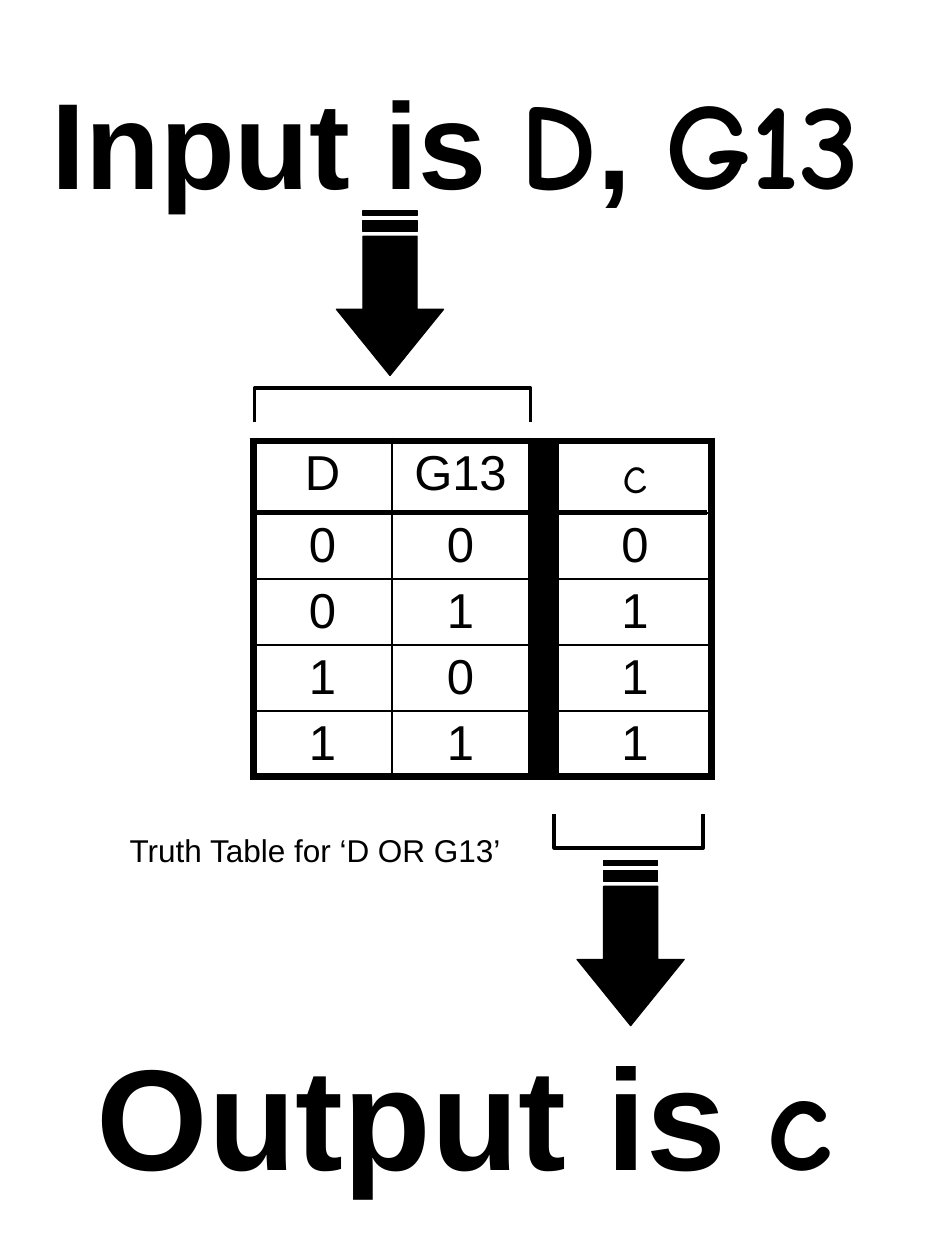
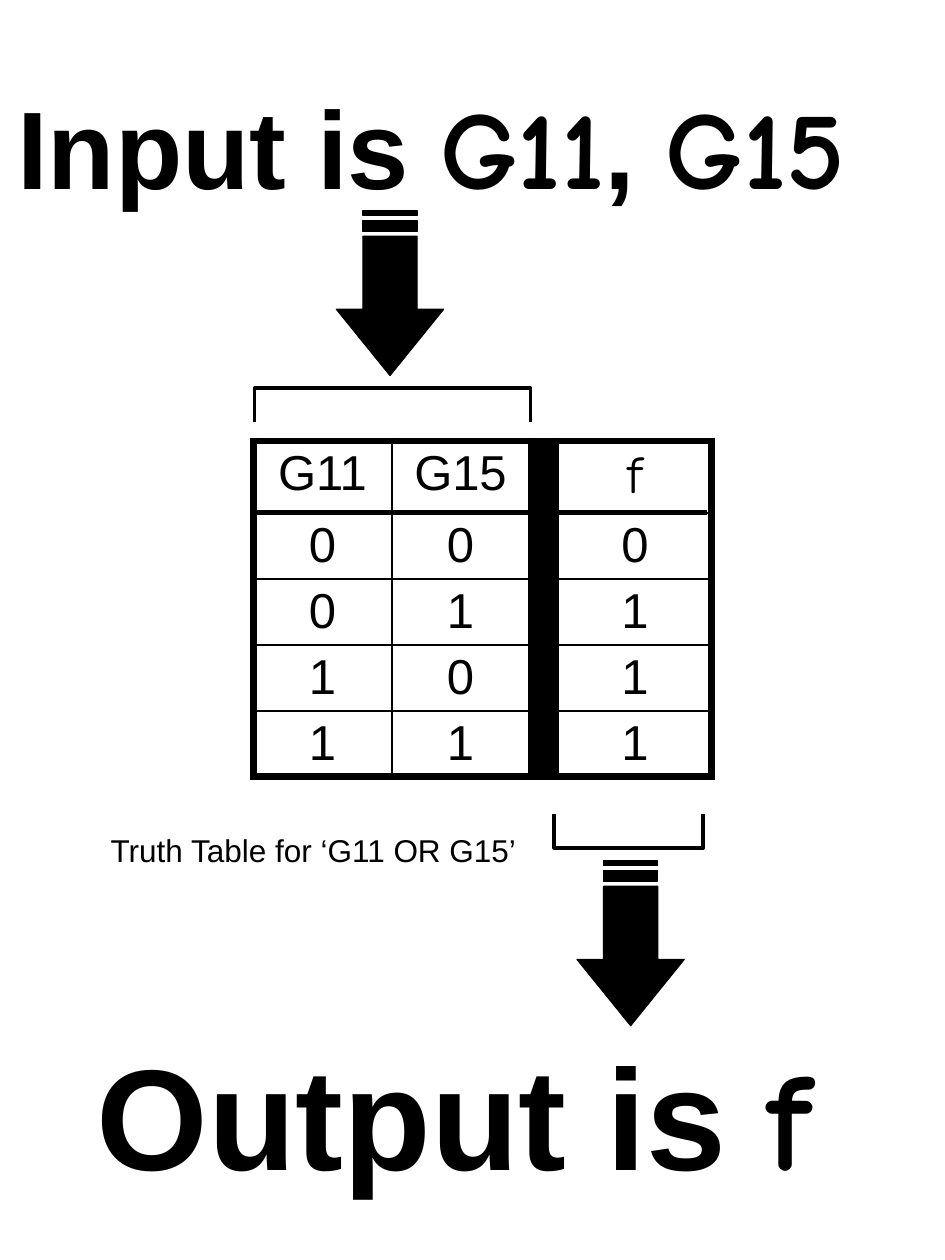
from dataclasses import dataclass
from itertools import product

from lxml import etree
from pptx import Presentation
from pptx import util as u
from pptx.dml.color import RGBColor
from pptx.enum import shapes, text
from pptx.oxml import ns

PX = 4572  # 200 px to the inch
INK = "000000"
SANS, HAND = "Arial", "Comic Neue"
CELL_MARGIN = 9
THIN, THICK = 1, 4.5
COLUMNS = (220, 218, 46, 244)
ROW_HEIGHT = 104
DIVIDER = 2  # index of the solid black column


@dataclass(frozen=True)
class Box:
    left: int
    top: int
    width: int
    height: int


@dataclass(frozen=True)
class Span:
    text: str
    font: str
    size: int
    bold: bool = False


@dataclass(frozen=True)
class Gate:
    inputs: tuple[str, str]
    output: str
    input_size: int
    input_box: Box
    caption_box: Box


GATES = (
    Gate(("D", "G13"), "c", 70, Box(62, 96, 1404, 254), Box(186, 1310, 638, 80)),
    Gate(("G11", "G15"), "f", 63, Box(8, 116, 1474, 230), Box(156, 1310, 696, 80)),
)
TABLE_BOX = Box(402, 700, 728, 574)
OUTPUT_BOX = Box(134, 1620, 1218, 294)
ARROWS = (Box(488, 380, 262, 170), Box(870, 1412, 262, 170))
INPUT_BRACKET = ((404, 670), (404, 616), (842, 616), (842, 670))
OUTPUT_BRACKET = ((880, 1292), (880, 1346), (1116, 1346), (1116, 1292))
HEADER_RULE = ((402, 814), (1122, 814))


def px(length: int) -> u.Emu:
    return u.Emu(length * PX)


def colour(value: str) -> RGBColor:
    return RGBColor.from_string(value)


def frame(box: Box) -> tuple[u.Emu, ...]:
    return px(box.left), px(box.top), px(box.width), px(box.height)


def style_run(run, span: Span) -> None:
    run.font.name = span.font
    run.font.size = u.Pt(span.size)
    run.font.bold = span.bold
    run.font.color.rgb = colour(INK)


def add_label(page, box: Box, spans: list[Span]) -> None:
    label = page.shapes.add_textbox(*frame(box)).text_frame
    label.word_wrap = False
    label.auto_size = text.MSO_AUTO_SIZE.SHAPE_TO_FIT_TEXT
    para = label.paragraphs[0]
    for span in spans:
        run = para.add_run()
        run.text = span.text
        style_run(run, span)


def add_outline(page, contours, line_width: float, closed: bool):
    """Draw px contours as one freeform, filled when closed."""
    builder = page.shapes.build_freeform(*contours[0][0], scale=PX)
    for index, (start, *rest) in enumerate(contours):
        if index:
            builder.move_to(*start)
        builder.add_line_segments(rest, close=closed)
    outline = builder.convert_to_shape()
    outline.shadow.inherit = False
    outline.line.color.rgb = colour(INK)
    outline.line.width = u.Pt(line_width)
    if closed:
        outline.fill.solid()
        outline.fill.fore_color.rgb = colour(INK)
    else:
        outline.fill.background()
    return outline


def add_striped_arrow(page, box: Box) -> None:
    """Draw a right-pointing arrow in the box, then turn it downwards."""
    unit = box.width / 32
    right, bottom = box.left + box.width, box.top + box.height
    middle = box.top + box.height // 2
    upper, lower = box.top + box.height // 4, bottom - box.height // 4
    neck = box.left + round(box.width * 0.6)

    def along(units: int) -> int:
        return box.left + round(units * unit)

    def stripe(start: int, end: int):
        return ((along(start), upper), (along(end), upper),
                (along(end), lower), (along(start), lower))

    head = ((neck, box.top), (neck, upper), (along(5), upper), (along(5), lower),
            (neck, lower), (neck, bottom), (right, middle))
    arrow = add_outline(page, (head, stripe(2, 4), stripe(0, 1)), 0.75, closed=True)
    arrow.rotation = 90


def set_borders(cell, widths: dict[str, float]) -> None:
    properties = cell._tc.get_or_add_tcPr()
    for side, width in widths.items():
        line = etree.SubElement(properties, ns.qn(f"a:ln{side}"), w=str(u.Pt(width)))
        fill = etree.SubElement(line, ns.qn("a:solidFill"))
        etree.SubElement(fill, ns.qn("a:srgbClr"), val=INK)


def fill_cell(cell, span: Span) -> None:
    para = cell.text_frame.paragraphs[0]
    para.text = span.text
    para.alignment = text.PP_ALIGN.CENTER
    style_run(para.runs[0], span)


def add_truth_table(page, gate: Gate) -> None:
    rows = [(*gate.inputs, "", gate.output)]
    rows += [(str(a), str(b), "", str(a | b)) for a, b in product((0, 1), repeat=2)]
    table = page.shapes.add_table(len(rows), len(COLUMNS), *frame(TABLE_BOX)).table
    table.first_row = table.horz_banding = False
    for column, width in zip(table.columns, COLUMNS):
        column.width = px(width)
    last_row, last_column = len(rows) - 1, len(COLUMNS) - 1
    for r, values in enumerate(rows):
        table.rows[r].height = px(ROW_HEIGHT)
        for c, value in enumerate(values):
            cell = table.cell(r, c)
            cell.margin_left = cell.margin_right = px(CELL_MARGIN)
            cell.margin_top = cell.margin_bottom = px(CELL_MARGIN)
            outer = {"L": c == 0, "R": c == last_column, "T": r == 0, "B": r == last_row}
            set_borders(cell, {side: THICK if edge else THIN for side, edge in outer.items()})
            if c == DIVIDER:
                cell.fill.solid()
                cell.fill.fore_color.rgb = colour(INK)
                continue
            cell.fill.background()
            is_output_name = r == 0 and c == last_column
            fill_cell(cell, Span(value, HAND, 30) if is_output_name else Span(value, SANS, 28))


def add_rule(page, start: tuple[int, int], end: tuple[int, int]) -> None:
    rule = page.shapes.add_connector(
        shapes.MSO_CONNECTOR.STRAIGHT, *map(px, start), *map(px, end))
    rule.line.color.rgb = colour(INK)
    rule.line.width = u.Pt(3)
    etree.SubElement(rule._element.spPr, ns.qn("a:effectLst"))


def add_gate_page(deck, gate: Gate) -> None:
    page = deck.slides.add_slide(deck.slide_layouts[6])
    first, second = gate.inputs
    size = gate.input_size
    add_truth_table(page, gate)
    add_label(page, gate.caption_box,
              [Span(f"Truth Table for ‘{first} OR {second}’", SANS, 18)])
    add_label(page, gate.input_box, [
        Span("Input is ", SANS, size, True), Span(first, HAND, size, True),
        Span(", ", SANS, size, True), Span(second, HAND, size, True)])
    for arrow, bracket in zip(ARROWS, (INPUT_BRACKET, OUTPUT_BRACKET)):
        add_striped_arrow(page, arrow)
        add_outline(page, (bracket,), 2.25, closed=False)
    add_label(page, OUTPUT_BOX, [
        Span("Output is ", SANS, 82, True), Span(gate.output, HAND, 80, True)])
    add_rule(page, *HEADER_RULE)


def main() -> None:
    deck = Presentation()
    deck.slide_width, deck.slide_height = px(1500), px(2000)
    for gate in GATES:
        add_gate_page(deck, gate)
    deck.save("out.pptx")


if __name__ == "__main__":
    main()
